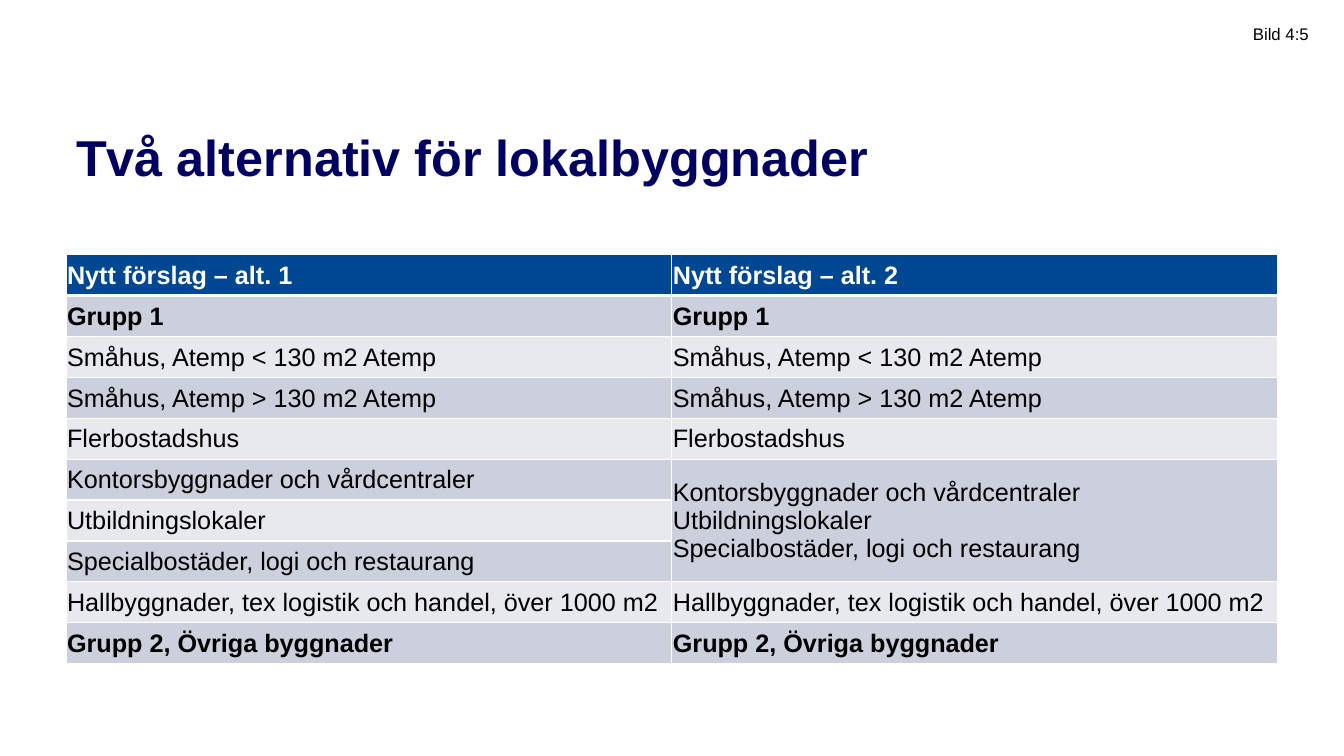
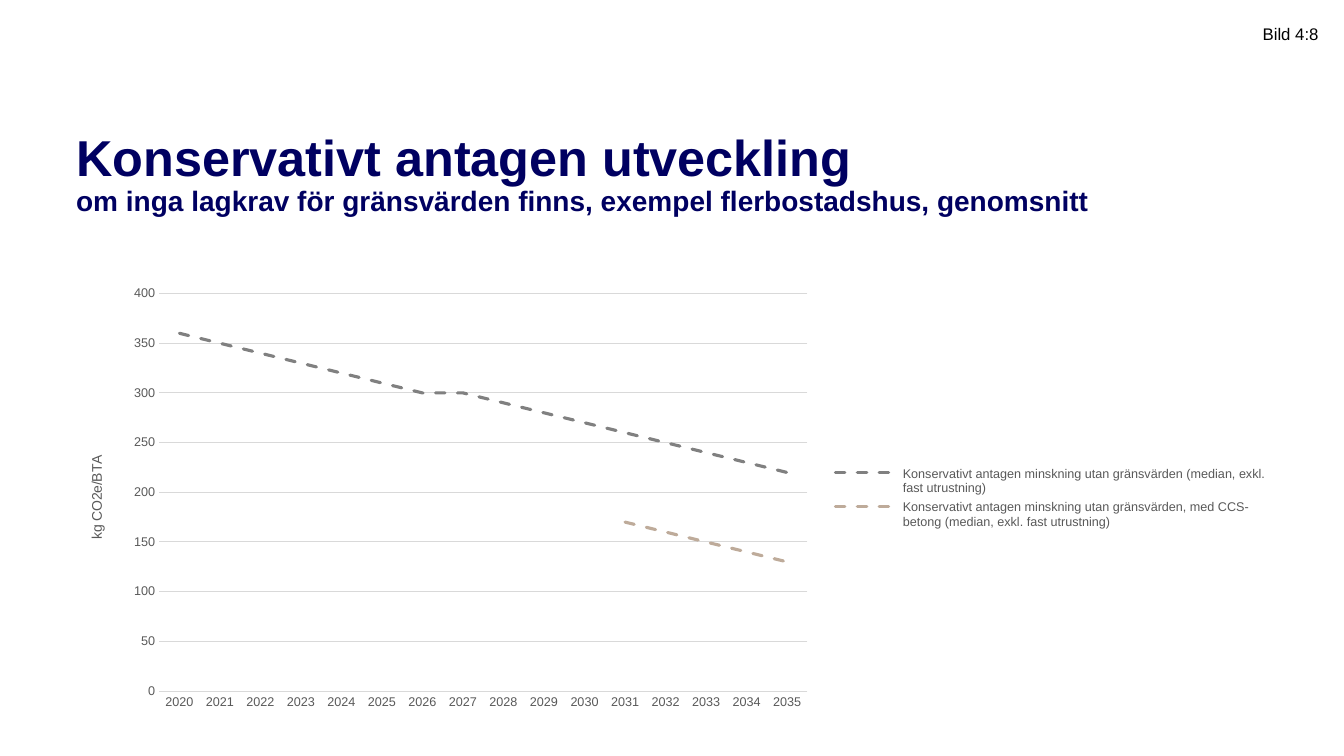
"""Build two slides on limit values for buildings: a table and a line chart."""
import pptx
import pptx.chart.data
import pptx.dml.color
import pptx.enum.chart
import pptx.enum.dml
import pptx.enum.text
import pptx.oxml
import pptx.oxml.ns
import pptx.util

Pt = pptx.util.Pt
RGBColor = pptx.dml.color.RGBColor

NAVY = RGBColor(0x00, 0x00, 0x61)
BLUE = RGBColor(0x00, 0x47, 0x91)
BAND_DARK = RGBColor(0xCC, 0xCF, 0xDC)
BAND_LIGHT = RGBColor(0xE7, 0xE9, 0xEE)
WHITE = RGBColor(0xFF, 0xFF, 0xFF)
BLACK = RGBColor(0x00, 0x00, 0x00)
LABEL_GRAY = RGBColor(0x59, 0x59, 0x59)
GRID_GRAY = RGBColor(0xD9, 0xD9, 0xD9)
SERIES_GRAY = RGBColor(0x80, 0x80, 0x80)
SERIES_SAND = RGBColor(0xBE, 0xAB, 0x9A)

FONT = "Arial"
LEFT, WIDTH = 47.2, 865.5
ROW_HEIGHT = 29.23
CHART_HEIGHT = 315.4

PREMISES = [
    "Kontorsbyggnader och vårdcentraler",
    "Utbildningslokaler",
    "Specialbostäder, logi och restaurang",
]
BUILDINGS = [
    "Grupp 1",
    "Småhus, Atemp < 130 m2 Atemp",
    "Småhus, Atemp > 130 m2 Atemp",
    "Flerbostadshus",
    *PREMISES,
    "Hallbyggnader, tex logistik och handel, över 1000 m2",
    "Grupp 2, Övriga byggnader",
]
SERIES = [
    ("Konservativt antagen minskning utan gränsvärden "
     "(median, exkl. fast utrustning)",
     [360, 350, 340, 330, 320, 310, 300, 300,
      290, 280, 270, 260, 250, 240, 230, 220], SERIES_GRAY),
    ("Konservativt antagen minskning utan gränsvärden, med CCS-betong "
     "(median, exkl. fast utrustning)",
     [None] * 11 + [170, 160, 150, 140, 130], SERIES_SAND),
]


def apply(target, **values):
    for name, value in values.items():
        setattr(target, name, value)


def style_font(font, size, color, bold=False):
    apply(font, name=FONT, size=Pt(size), bold=bold)
    font.color.rgb = color


def set_margins(target, left, top, right, bottom):
    apply(target, margin_left=Pt(left), margin_top=Pt(top),
          margin_right=Pt(right), margin_bottom=Pt(bottom))


def add_page(deck, title, subtitle=None):
    page = deck.slides.add_slide(deck.slide_layouts[5])
    box = page.shapes.title
    apply(box, left=Pt(LEFT), top=Pt(86.4), width=Pt(WIDTH), height=Pt(44.6))
    frame = box.text_frame
    apply(frame, word_wrap=True, auto_size=pptx.enum.text.MSO_AUTO_SIZE.NONE,
          vertical_anchor=pptx.enum.text.MSO_ANCHOR.TOP)
    set_margins(frame, 7.2, 8.64, 7.2, 3.6)
    para = frame.paragraphs[0]
    apply(para, alignment=pptx.enum.text.PP_ALIGN.LEFT, line_spacing=0.9)
    span = para.add_run()
    span.text = title
    style_font(span.font, 36, NAVY, True)
    if subtitle:
        para.add_line_break()
        span = para.add_run()
        span.text = subtitle
        style_font(span.font, 20, NAVY, True)
    return page


def add_page_label(page, text, left, width, wrap):
    box = page.shapes.add_textbox(Pt(left), Pt(13.7), Pt(width), Pt(21.6))
    frame = box.text_frame
    apply(frame, text=text, word_wrap=wrap,
          auto_size=pptx.enum.text.MSO_AUTO_SIZE.SHAPE_TO_FIT_TEXT)
    style_font(frame.paragraphs[0].runs[0].font, 12, BLACK)


def add_border(cell, side, width):
    properties = cell._tc.get_or_add_tcPr()
    properties.append(pptx.oxml.parse_xml(
        f'<a:{side} {pptx.oxml.ns.nsdecls("a")} w="{Pt(width)}">'
        f'<a:solidFill><a:srgbClr val="{WHITE}"/></a:solidFill></a:{side}>'))


def format_cell(cell, row):
    header = row == 0
    above = 3 if row == 1 else 1
    below = 3 if header else 1
    for side, width in {"lnL": 1, "lnR": 1, "lnT": above, "lnB": below}.items():
        add_border(cell, side, width)
    cell.fill.solid()
    cell.fill.fore_color.rgb = (
        BLUE if header else BAND_DARK if row % 2 else BAND_LIGHT)
    cell.vertical_anchor = pptx.enum.text.MSO_ANCHOR.MIDDLE
    set_margins(cell, 0.72, 0.72, 0.72, 0)
    bold = row in (0, 1, len(BUILDINGS))
    for para in cell.text_frame.paragraphs:
        style_font(para.font, 18, WHITE if header else BLACK, bold)


def add_building_table(page):
    count = len(BUILDINGS) + 1
    table = page.shapes.add_table(
        count, 2, Pt(LEFT), Pt(181.8), Pt(WIDTH), Pt(ROW_HEIGHT * count)).table
    first = BUILDINGS.index(PREMISES[0]) + 1
    last = first + len(PREMISES) - 1
    for column in range(2):
        for row, text in enumerate([f"Nytt förslag – alt. {column + 1}", *BUILDINGS]):
            cell = table.cell(row, column)
            if column == 0 or not first <= row <= last:
                cell.text = text
            elif row == first:
                cell.text = "\n".join(PREMISES)
            format_cell(cell, row)
    table.cell(first, 1).merge(table.cell(last, 1))


def place(element, index, **position):
    """Give a chart part a manual layout, in points from the chart's corner."""
    for old in element.xpath("./c:layout"):
        element.remove(old)
    whole = {"x": WIDTH, "y": CHART_HEIGHT, "w": WIDTH, "h": CHART_HEIGHT}
    target = '<c:layoutTarget val="inner"/>' if index == 0 else ""
    modes = "".join(f'<c:{key}Mode val="edge"/>' for key in "xy")
    sizes = "".join(f'<c:{key} val="{value / whole[key]}"/>'
                    for key, value in position.items())
    element.insert(index, pptx.oxml.parse_xml(
        f'<c:layout {pptx.oxml.ns.nsdecls("c")}><c:manualLayout>'
        f'{target}{modes}{sizes}</c:manualLayout></c:layout>'))


def style_line(line, color, width):
    line.color.rgb = color
    line.width = Pt(width)


def format_axes(chart):
    for axis in (chart.category_axis, chart.value_axis):
        axis.major_tick_mark = pptx.enum.chart.XL_TICK_MARK.NONE
        style_font(axis.tick_labels.font, 9, LABEL_GRAY)
    style_line(chart.category_axis.format.line, GRID_GRAY, 0.75)
    values = chart.value_axis
    apply(values, minimum_scale=0, maximum_scale=400, major_unit=50)
    apply(values.tick_labels, number_format="0", number_format_is_linked=False)
    values.format.line.fill.background()
    style_line(values.major_gridlines.format.line, GRID_GRAY, 0.75)
    frame = values.axis_title.text_frame
    frame.text = "kg CO2e/BTA"
    style_font(frame.paragraphs[0].runs[0].font, 10, LABEL_GRAY)


def add_trend_chart(page):
    data = pptx.chart.data.CategoryChartData(number_format="0")
    data.categories = [str(year) for year in range(2020, 2036)]
    for name, values, _ in SERIES:
        data.add_series(name, values)
    chart = page.shapes.add_chart(
        pptx.enum.chart.XL_CHART_TYPE.LINE, Pt(LEFT), Pt(198), Pt(WIDTH),
        Pt(CHART_HEIGHT), data).chart
    apply(chart, has_title=False, has_legend=True)
    style_font(chart.font, 10, BLACK)
    format_axes(chart)
    chart.plots[0].vary_by_categories = False
    for series, (_, _, color) in zip(chart.plots[0].series, SERIES):
        series.smooth = False
        series.marker.style = pptx.enum.chart.XL_MARKER_STYLE.NONE
        style_line(series.format.line, color, 2.25)
        series.format.line.dash_style = pptx.enum.dml.MSO_LINE.DASH
    apply(chart.legend, include_in_layout=False,
          position=pptx.enum.chart.XL_LEGEND_POSITION.RIGHT)
    style_font(chart.legend.font, 9, LABEL_GRAY)
    space = chart._chartSpace
    for line in space.xpath(".//c:ser/c:spPr/a:ln"):
        line.set("cap", "rnd")
    place(space.xpath(".//c:plotArea")[0], 0, x=66.5, y=11.7, w=463, h=284)
    place(space.xpath(".//c:legend")[0], 1, x=543, y=132.5, w=320, h=50.5)
    place(space.xpath(".//c:valAx/c:title")[0], 1, x=13.5, y=125.5)


def main():
    deck = pptx.Presentation()
    apply(deck, slide_width=Pt(960), slide_height=Pt(540))

    page = add_page(deck, "Två alternativ för lokalbyggnader")
    add_building_table(page)
    add_page_label(page, "Bild 4:5", 887.8, 61.2, True)

    page = add_page(
        deck, "Konservativt antagen utveckling",
        "om inga lagkrav för gränsvärden finns, exempel flerbostadshus, genomsnitt")
    add_trend_chart(page)
    add_page_label(page, "Bild 4:8", 894.8, 55.4, False)

    deck.save("out.pptx")


if __name__ == "__main__":
    main()
